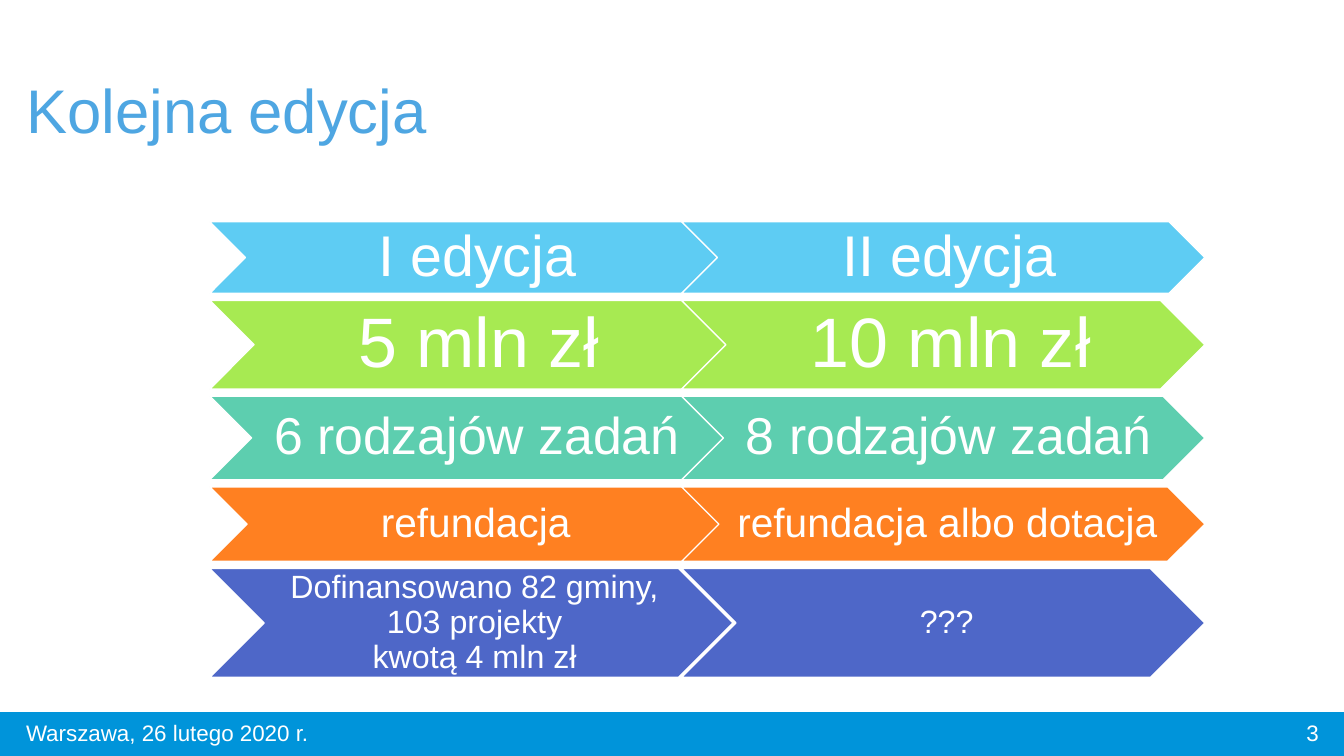
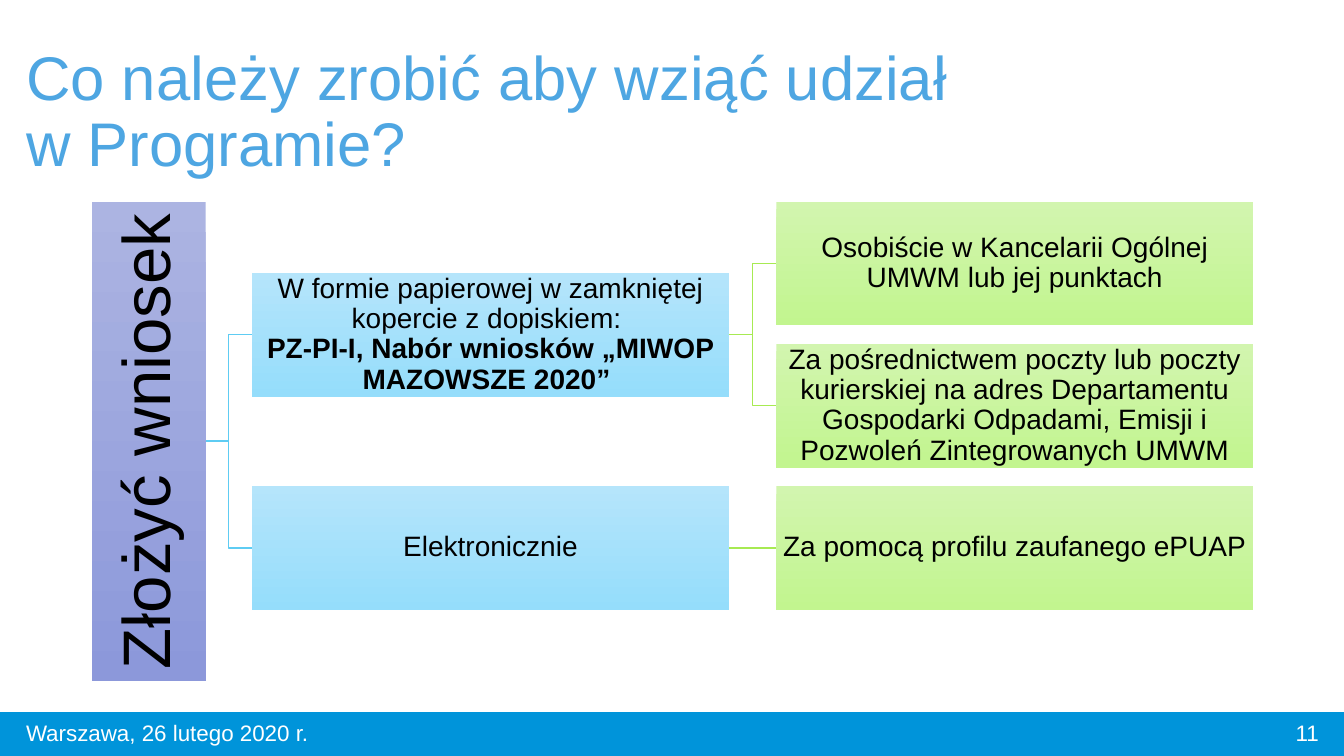
from dataclasses import dataclass

from lxml import etree
from pptx import Presentation
from pptx.dml.color import RGBColor
from pptx.enum.shapes import MSO_CONNECTOR, MSO_SHAPE
from pptx.enum.text import MSO_ANCHOR, MSO_AUTO_SIZE, PP_ALIGN
from pptx.oxml.ns import qn
from pptx.shapes.autoshape import Shape
from pptx.slide import Slide, SlideLayout
from pptx.text.text import TextFrame
from pptx.util import Inches, Pt

RECTANGLE, CHEVRON = MSO_SHAPE.RECTANGLE, MSO_SHAPE.CHEVRON
ELBOW, STRAIGHT = MSO_CONNECTOR.ELBOW, MSO_CONNECTOR.STRAIGHT
LEFT, CENTER, RIGHT = PP_ALIGN.LEFT, PP_ALIGN.CENTER, PP_ALIGN.RIGHT
MIDDLE = MSO_ANCHOR.MIDDLE
NO_AUTOFIT = MSO_AUTO_SIZE.NONE
LEFT_SITE, RIGHT_SITE = 1, 3  # connection sites of a rectangle

FONT = "Arial"
WHITE = RGBColor(0xFF, 0xFF, 0xFF)
BLACK = RGBColor(0x00, 0x00, 0x00)
TITLE_BLUE = RGBColor(0x4E, 0xA6, 0xE2)
BAND_BLUE = RGBColor(0x00, 0x94, 0xDA)
SKY = RGBColor(0x5E, 0xCC, 0xF3)
LIME = RGBColor(0xA7, 0xEA, 0x52)
TEAL = RGBColor(0x5D, 0xCE, 0xAF)
ORANGE = RGBColor(0xFF, 0x80, 0x21)
INDIGO = RGBColor(0x4E, 0x67, 0xC8)
INDIGO_TOP, INDIGO_BOTTOM = RGBColor(0xAC, 0xB4, 0xE2), RGBColor(0x8C, 0x98, 0xDA)
SKY_TOP, SKY_BOTTOM = RGBColor(0xB5, 0xE5, 0xFB), RGBColor(0x95, 0xDD, 0xFB)
LIME_TOP, LIME_BOTTOM = RGBColor(0xD2, 0xF5, 0xAF), RGBColor(0xC2, 0xF5, 0x8F)

SLIDE_WIDTH, SLIDE_HEIGHT = 13.33, 7.5
BAND_TOP = 7.07
FOOTER_DATE = "Warszawa, 26 lutego 2020 r."


@dataclass
class EditionRow:
    first: str
    second: str
    size: int
    height: float
    color: RGBColor


@dataclass
class Level:
    left: float
    width: float
    height: float
    size: int
    inset: float
    top_color: RGBColor
    bottom_color: RGBColor
    branch_color: RGBColor  # line to the next level


@dataclass
class Node:
    text: str
    bold_text: str = ""
    children: tuple["Node", ...] = ()


EDITION_ROWS = (
    EditionRow("I edycja", "II edycja", 41, 0.71, SKY),
    EditionRow("5 mln zł", "10 mln zł", 50, 0.88, LIME),
    EditionRow("6 rodzajów zadań", "8 rodzajów zadań", 37, 0.83, TEAL),
    EditionRow("refundacja", "refundacja albo dotacja", 29, 0.74, ORANGE),
    EditionRow("Dofinansowano 82 gminy, 103 projekty\nkwotą 4 mln zł", "???",
               23, 1.08, INDIGO),
)
CHEVRON_LEFT, CHEVRON_WIDTH, CHEVRON_PITCH = 2.08, 5.19, 4.68
ROWS_TOP, ROW_GAP = 2.2, 0.07

LEVELS = (
    Level(0.91, 1.13, 4.75, 48, 0.03, INDIGO_TOP, INDIGO_BOTTOM, SKY),
    Level(2.5, 4.73, 1.23, 20, 0.01, SKY_TOP, SKY_BOTTOM, LIME),
    Level(7.7, 4.73, 1.23, 20, 0.01, LIME_TOP, LIME_BOTTOM, LIME),
)
LEAF_TOP, LEAF_PITCH = 2.0, 1.41
APPLICATION = Node("Złożyć wniosek", children=(
    Node("W formie papierowej w zamkniętej kopercie z dopiskiem: \n",
         "PZ-PI-I, Nabór wniosków „MIWOP MAZOWSZE 2020” ", children=(
             Node("Osobiście w Kancelarii Ogólnej UMWM lub jej punktach"),
             Node("Za pośrednictwem poczty lub poczty kurierskiej na adres "
                  "Departamentu Gospodarki Odpadami, Emisji i Pozwoleń "
                  "Zintegrowanych UMWM"),
         )),
    Node("Elektronicznie", children=(Node("Za pomocą profilu zaufanego ePUAP"),)),
))


def write_text(frame: TextFrame, text: str, size: int, color: RGBColor,
               align: PP_ALIGN, bold_text: str = "", spacing: float = 0.9) -> None:
    """Fill one paragraph run by run; a newline is a line break."""
    frame.word_wrap = True
    frame.auto_size = NO_AUTOFIT
    frame.vertical_anchor = MIDDLE
    paragraph = frame.paragraphs[0]
    paragraph.alignment = align
    paragraph.line_spacing = spacing
    for content, bold in ((text, False), (bold_text, True)):
        for index, line in enumerate(content.split("\n")):
            if index:
                paragraph.add_line_break()
            if line:
                run = paragraph.add_run()
                run.text = line
                run.font.name = FONT
                run.font.size = Pt(size)
                run.font.bold = bold
                run.font.color.rgb = color


def set_insets(frame: TextFrame, left: float, other: float) -> None:
    frame.margin_left = Inches(left)
    frame.margin_top = frame.margin_right = frame.margin_bottom = Inches(other)


def add_filled_shape(slide: Slide, kind: MSO_SHAPE, left: float, top: float,
                     width: float, height: float, fill: RGBColor,
                     line: RGBColor) -> Shape:
    shape = slide.shapes.add_shape(
        kind, Inches(left), Inches(top), Inches(width), Inches(height))
    shape.shadow.inherit = False
    shape.fill.solid()
    shape.fill.fore_color.rgb = fill
    shape.line.color.rgb = line
    shape.line.width = Pt(1)
    return shape


def add_footer_text(slide: Slide, text: str, left: float, width: float,
                    align: PP_ALIGN) -> None:
    box = slide.shapes.add_textbox(
        Inches(left), Inches(BAND_TOP), Inches(width), Inches(0.4))
    write_text(box.text_frame, text, 16, WHITE, align, spacing=1.0)


def place_title(layout: SlideLayout) -> None:
    """Set the title position that every slide inherits."""
    title = layout.placeholders[0]
    title.left, title.top = Inches(0.16), Inches(0.4)
    title.width, title.height = Inches(10.02), Inches(1.45)


def add_base_slide(presentation: Presentation, layout: SlideLayout,
                   title: str, number: int) -> Slide:
    """Add a slide with the shared title, band and footer."""
    slide = presentation.slides.add_slide(layout)
    write_text(slide.shapes.title.text_frame, title, 44, TITLE_BLUE, LEFT)
    add_filled_shape(slide, RECTANGLE, 0, BAND_TOP, SLIDE_WIDTH,
                     SLIDE_HEIGHT - BAND_TOP, BAND_BLUE, BAND_BLUE)
    add_footer_text(slide, FOOTER_DATE, 0.16, 4, LEFT)
    add_footer_text(slide, str(number), 10.18, 3, RIGHT)
    return slide


def add_edition_rows(slide: Slide) -> None:
    top = ROWS_TOP
    for row in EDITION_ROWS:
        for column, text in enumerate((row.first, row.second)):
            chevron = add_filled_shape(
                slide, CHEVRON, CHEVRON_LEFT + column * CHEVRON_PITCH, top,
                CHEVRON_WIDTH, row.height, row.color, WHITE)
            # Insets grow with the text size
            inset = row.size * 0.15 / 100
            set_insets(chevron.text_frame, 3 * inset, inset)
            write_text(chevron.text_frame, text, row.size, WHITE, CENTER)
        top += row.height + ROW_GAP


def add_node_box(slide: Slide, node: Node, level: Level, middle: float) -> Shape:
    box = slide.shapes.add_shape(
        RECTANGLE, Inches(level.left), Inches(middle - level.height / 2),
        Inches(level.width), Inches(level.height))
    box.shadow.inherit = False
    box.line.fill.background()
    box.fill.gradient()
    box.fill.gradient_angle = 270
    for stop, color in zip(box.fill.gradient_stops,
                           (level.top_color, level.bottom_color)):
        stop.color.rgb = color
    frame = box.text_frame
    set_insets(frame, level.inset, level.inset)
    write_text(frame, node.text, level.size, BLACK, CENTER, node.bold_text)
    if level.height > level.width:  # tall box: text reads upwards
        frame._txBody.bodyPr.set("vert", "vert270")
    return box


def add_branch(slide: Slide, parent: Shape, child: Shape, color: RGBColor,
               level_with_parent: bool) -> None:
    connector = slide.shapes.add_connector(
        STRAIGHT if level_with_parent else ELBOW, 0, 0, 0, 0)
    connector.begin_connect(parent, RIGHT_SITE)
    connector.end_connect(child, LEFT_SITE)
    connector.line.color.rgb = color
    connector.line.width = Pt(1)
    etree.SubElement(connector._element.spPr, qn("a:effectLst"))


def add_tree(slide: Slide, node: Node, depth: int = 0,
             first_leaf: int = 0) -> tuple[Shape, float, int]:
    """Draw a node centred on its children; return box, middle and next leaf."""
    level = LEVELS[depth]
    next_leaf = first_leaf
    branches: list[tuple[Shape, float]] = []
    for child in node.children:
        child_box, child_middle, next_leaf = add_tree(
            slide, child, depth + 1, next_leaf)
        branches.append((child_box, child_middle))
    if branches:
        middle = (branches[0][1] + branches[-1][1]) / 2
    else:
        middle = LEAF_TOP + first_leaf * LEAF_PITCH + level.height / 2
        next_leaf += 1
    box = add_node_box(slide, node, level, middle)
    for child_box, _ in branches:
        add_branch(slide, box, child_box, level.branch_color, len(branches) == 1)
    return box, middle, next_leaf


def main() -> None:
    presentation = Presentation()
    presentation.slide_width = Inches(SLIDE_WIDTH)
    presentation.slide_height = Inches(SLIDE_HEIGHT)
    layout = presentation.slide_layouts.get_by_name("Title Only")
    place_title(layout)

    # Comparison of the two editions
    editions = add_base_slide(presentation, layout, "Kolejna edycja", 3)
    add_edition_rows(editions)

    # Ways to apply
    application = add_base_slide(
        presentation, layout,
        "Co należy zrobić aby wziąć udział \nw Programie?", 11)
    add_tree(application, APPLICATION)

    presentation.save("out.pptx")


if __name__ == "__main__":
    main()
